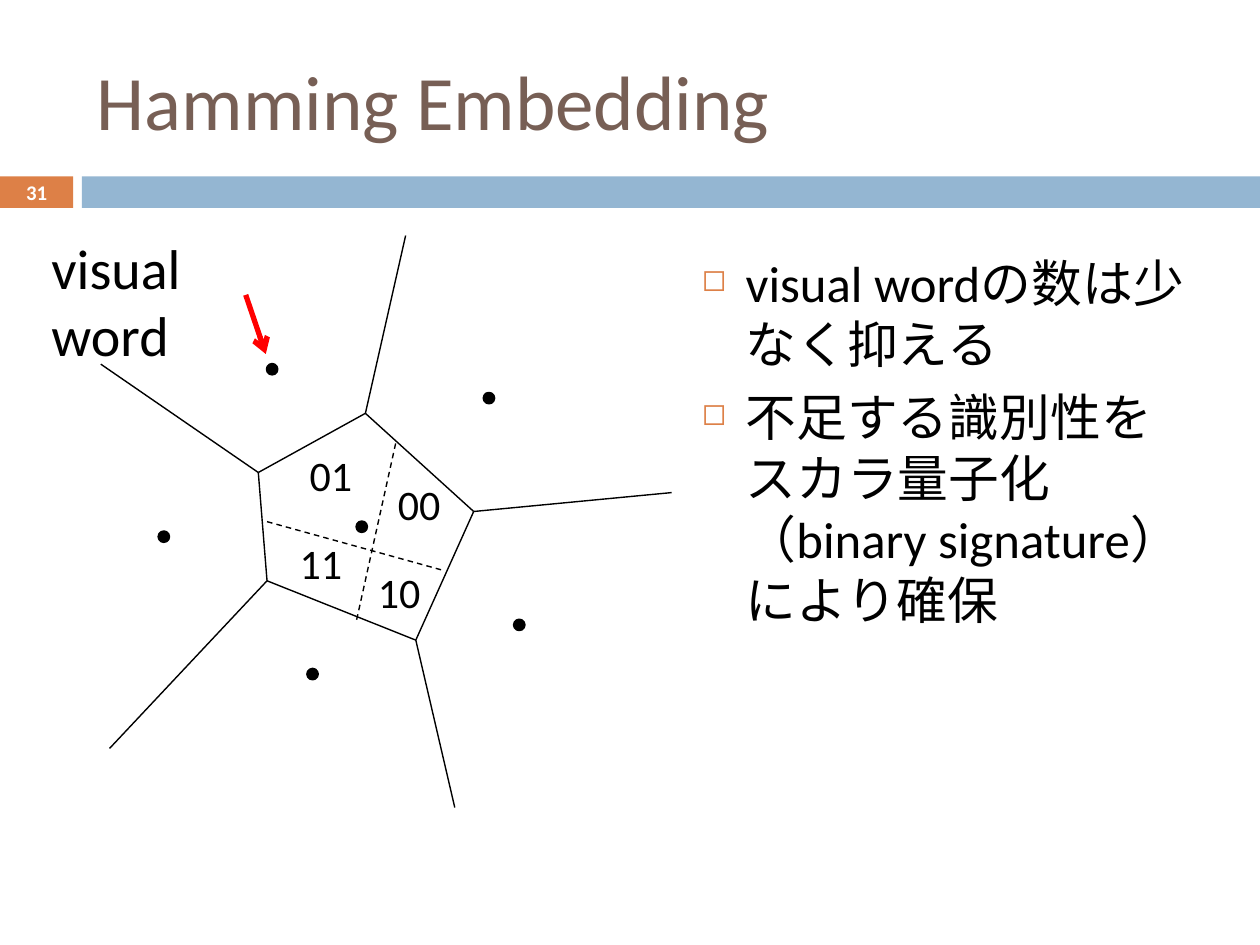
"""Build the Hamming Embedding slide with its Voronoi cell diagram."""
from dataclasses import dataclass

from lxml import etree
from pptx import Presentation
from pptx.dml.color import RGBColor as Color
from pptx.enum.dml import MSO_LINE_DASH_STYLE as Dash
from pptx.enum.shapes import MSO_CONNECTOR as Connector, MSO_SHAPE as Shape
from pptx.enum.text import MSO_ANCHOR as Anchor, PP_ALIGN as Align
from pptx.oxml.ns import qn
from pptx.util import Pt


@dataclass(frozen=True)
class Theme:
    font: str = "Calibri"
    title: str = "775F55"
    accent: str = "DD8047"
    bar: str = "94B6D2"
    ink: str = "000000"
    paper: str = "FFFFFF"
    arrow: str = "FF0000"
    title_size: float = 44
    word_size: float = 32
    body_size: float = 29
    code_size: float = 24
    number_size: float = 11.9
    thin: float = 0.79
    thick: float = 3


theme = Theme()
deck = Presentation()
deck.slide_width, deck.slide_height = Pt(720), Pt(540)
page = deck.slides.add_slide(deck.slide_layouts[5])


def add_span(para, text, size, color, bold=False):
    span = para.add_run()
    span.text = text
    span.font.name = theme.font
    span.font.size = Pt(size)
    span.font.bold = bold
    span.font.color.rgb = Color.from_string(color)


def add_line(start, end, color=theme.ink, width=theme.thin):
    line = page.shapes.add_connector(Connector.STRAIGHT, *map(Pt, start + end))
    line.line.color.rgb = Color.from_string(color)
    line.line.width = Pt(width)
    etree.SubElement(line._element.spPr, qn("a:effectLst"))
    return line


for left, width, color in [(0, 41.8, theme.accent), (46.8, 673.2, theme.bar)]:
    band = page.shapes.add_shape(Shape.RECTANGLE, Pt(left), Pt(100.8), Pt(width), Pt(18))
    band.shadow.inherit = False
    band.fill.solid()
    band.fill.fore_color.rgb = Color.from_string(color)
    band.line.fill.background()

title = page.shapes.title
title.left, title.top, title.width, title.height = Pt(48.2), Pt(18), Pt(642.2), Pt(77.8)
title.text_frame.vertical_anchor = Anchor.MIDDLE
para = title.text_frame.paragraphs[0]
para.alignment = Align.LEFT
add_span(para, "Hamming Embedding", theme.title_size, theme.title)

number = page.shapes.add_textbox(0, Pt(100.1), Pt(41.8), Pt(19.4))
number.text_frame.vertical_anchor = Anchor.MIDDLE
number.text_frame.word_wrap = True
para = number.text_frame.paragraphs[0]
para.alignment = Align.CENTER
add_span(para, "31", theme.number_size, theme.paper, bold=True)

points = [
    ["visual wordの数は少なく抑える"],
    ["不足する識別性を", "スカラ量子化", "（binary signature）", "により確保"],
]
body = page.shapes.add_textbox(Pt(393.8), Pt(140.4), Pt(306), Pt(236.2))
body.text_frame.word_wrap = True
for index, rows in enumerate(points):
    para = body.text_frame.add_paragraph() if index else body.text_frame.paragraphs[0]
    props = para._p.get_or_add_pPr()
    props.set("marL", str(Pt(25.2)))
    props.set("indent", str(-Pt(25.2)))
    bullet_color = etree.SubElement(props, qn("a:buClr"))
    etree.SubElement(bullet_color, qn("a:srgbClr"), val=theme.accent)
    etree.SubElement(props, qn("a:buSzPct"), val="60000")
    etree.SubElement(props, qn("a:buChar"), char="◻")
    if index:
        para.space_before = Pt(7)
    for row_index, row in enumerate(rows):
        if row_index:
            para.add_line_break()
        add_span(para, row, theme.body_size, theme.ink)

sites = [(276.5, 224.6), (90.7, 303.8), (152.6, 208.1),
         (203.8, 298.1), (175.7, 382.3), (293.8, 354.2)]
for left, top in sites:
    dot = page.shapes.add_shape(Shape.OVAL, Pt(left), Pt(top), Pt(5.8), Pt(5.8))
    dot.shadow.inherit = False
    dot.fill.solid()
    dot.fill.fore_color.rgb = Color.from_string(theme.ink)
    dot.line.color.rgb = Color.from_string(theme.ink)
    dot.line.width = Pt(1.5)

corners = [(147.6, 270), (208.8, 236.2), (270.7, 292.3), (237.6, 365.8), (152.6, 331.9)]
ray_ends = [(57.6, 208.1), (231.8, 134.6), (383.8, 281.5), (259.9, 461.5), (62.6, 427.7)]
for corner, following, ray_end in zip(corners, corners[1:] + corners[:1], ray_ends):
    add_line(corner, following)
    add_line(corner, ray_end)

splits = [((152.6, 298.1), (254.2, 326.2)), ((226.1, 253.4), (203.8, 354.2))]
for start, end in splits:
    add_line(start, end).line.dash_style = Dash.DASH

codes = [("00", 220.3, 270), ("01", 169.9, 253.4), ("10", 208.8, 320.4), ("11", 164.2, 303.8)]
for code, left, top in codes:
    box = page.shapes.add_textbox(Pt(left), Pt(top), Pt(41), Pt(36))
    box.text_frame.word_wrap = False
    add_span(box.text_frame.paragraphs[0], code, theme.code_size, theme.ink)

word = page.shapes.add_textbox(Pt(22.3), Pt(129.6), Pt(159.8), Pt(46))
word.text_frame.word_wrap = True
word.text_frame.margin_right = Pt(50)
add_span(word.text_frame.paragraphs[0], "visual word", theme.word_size, theme.ink)

pointer = add_line((140.4, 168.5), (151.9, 202.3), theme.arrow, theme.thick)
etree.SubElement(pointer.line._get_or_add_ln(), qn("a:tailEnd"), type="arrow")

deck.save("out.pptx")
